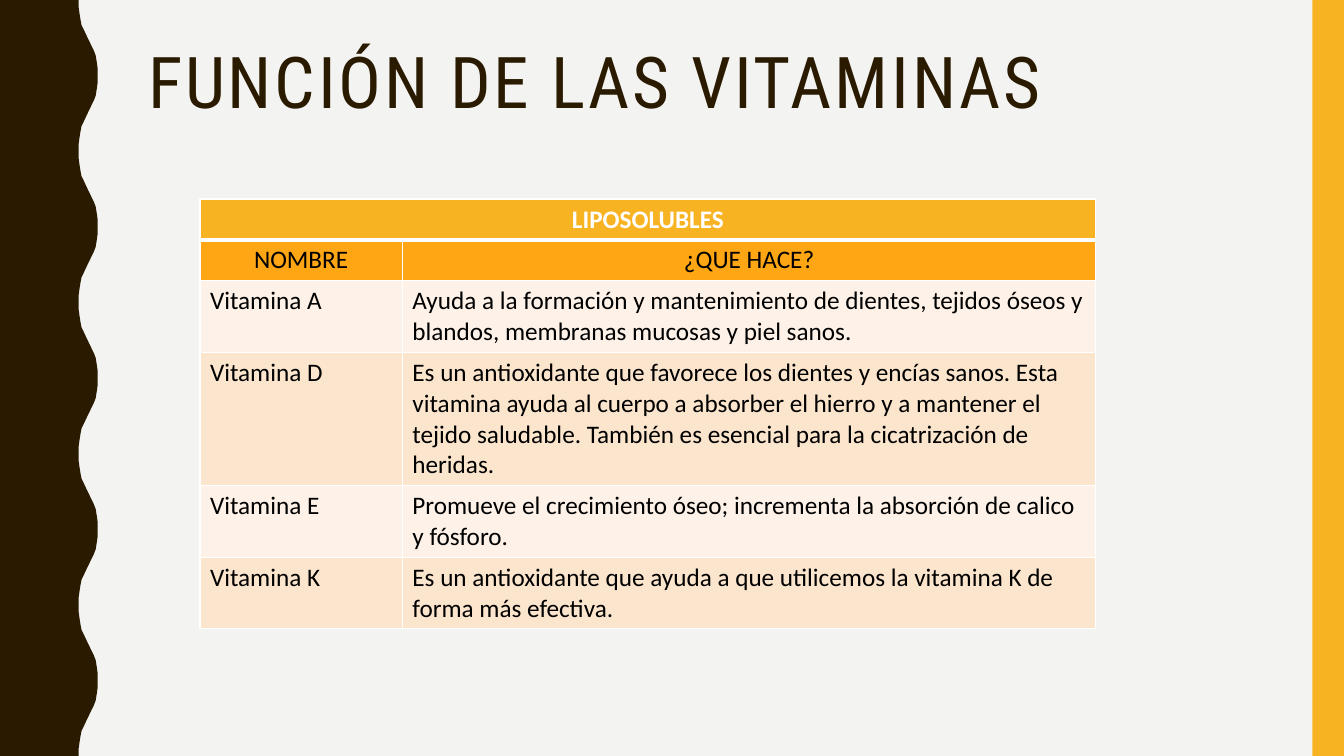
"""Builds the slide on what the fat-soluble vitamins do."""
from lxml.etree import SubElement
from pptx import Presentation
from pptx.dml.color import RGBColor
from pptx.enum.shapes import MSO_SHAPE
from pptx.enum.text import MSO_ANCHOR, MSO_AUTO_SIZE, PP_ALIGN
from pptx.oxml.ns import qn
from pptx.util import Pt


def paint(fill, color):
    fill.solid()
    fill.fore_color.rgb = RGBColor.from_string(color)


def add_border(cell, side, width):
    ln = SubElement(cell._tc.get_or_add_tcPr(), qn(f"a:ln{side}"), w=str(Pt(width)))
    SubElement(SubElement(ln, qn("a:solidFill")), qn("a:srgbClr"), val="FFFFFF")


DARK, GOLD, ORANGE = "2A1A00", "F8B323", "FFA615"
BANDS = ["FEF2E8", "FCE5CD"]

prs = Presentation()
prs.slide_width, prs.slide_height = Pt(960), Pt(540)
s = prs.slides.add_slide(prs.slide_layouts[5])
paint(s.background.fill, "F3F3F2")

wave_x = [56.2, 56.2, 56.9, 57.6, 58.3, 59.8, 61.2, 62.6, 64.1, 65.5, 67, 68.4, 69.1, 69.8, 69.8]
wave_y = [0, 5, 10, 14.4, 18, 21, 24, 27, 30, 33, 36, 39.6, 44, 49, 54]
edge = []
for half in range(10):
    xs = wave_x[::-1] if half % 2 else wave_x
    edge += [(Pt(x), Pt(54 * half + y)) for x, y in zip(xs, wave_y)]
fb = s.shapes.build_freeform(0, 0)
fb.add_line_segments(edge + [(0, Pt(540))], close=True)
wave = fb.convert_to_shape()
bar = s.shapes.add_shape(MSO_SHAPE.RECTANGLE, Pt(937.5), 0, Pt(22.5), Pt(540))
for sp, color in [(wave, DARK), (bar, GOLD)]:
    sp.shadow.inherit = False
    sp.line.fill.background()
    paint(sp.fill, color)

title = s.shapes.title
title.left, title.top, title.width, title.height = Pt(98.6), Pt(30.2), Pt(801.4), Pt(117.4)
tf = title.text_frame
tf.text = "FUNCIÓN DE LAS VITAMINAS"
tf.auto_size = MSO_AUTO_SIZE.NONE
tf.vertical_anchor = MSO_ANCHOR.TOP
p = tf.paragraphs[0]
p.alignment = PP_ALIGN.LEFT
p.line_spacing = 0.9
r = p.runs[0]
r.font.name, r.font.size = "Roboto Condensed", Pt(51)
paint(r.font.fill, DARK)
r.font._element.set("spc", "200")

rows = [
    ("LIPOSOLUBLES", ""),
    ("NOMBRE", "¿QUE HACE?"),
    ("Vitamina A", "Ayuda a la formación y mantenimiento de dientes, tejidos óseos y blandos, "
     "membranas mucosas y piel sanos."),
    ("Vitamina D", "Es un antioxidante que favorece los dientes y encías sanos. Esta vitamina "
     "ayuda al cuerpo a absorber el hierro y a mantener el tejido saludable. También es esencial "
     "para la cicatrización de heridas."),
    ("Vitamina E", "Promueve el crecimiento óseo; incrementa la absorción de calico y fósforo."),
    ("Vitamina K", "Es un antioxidante que ayuda a que utilicemos la vitamina K de forma más "
     "efectiva."),
]
fills = [GOLD, ORANGE] + BANDS * 2
table = s.shapes.add_table(len(rows), 2, Pt(142.8), Pt(142.2), Pt(640), Pt(175.2)).table
table.columns[0].width, table.columns[1].width = Pt(144.6), Pt(495.4)
for i, texts in enumerate(rows):
    table.rows[i].height = Pt(29.2)
    for j, text in enumerate(texts):
        cell = table.cell(i, j)
        for side in "LRTB":
            thick = (i, side) in [(0, "B"), (1, "T")]
            add_border(cell, side, 3 if thick else 1)
        paint(cell.fill, fills[i])
        p = cell.text_frame.paragraphs[0]
        p.text = text
        p.alignment = PP_ALIGN.CENTER if i < 2 else PP_ALIGN.LEFT
        for r in p.runs:
            r.font.name, r.font.size, r.font.bold = "Calibri", Pt(18), i == 0
            paint(r.font.fill, "000000" if i else "FFFFFF")
table.cell(0, 0).merge(table.cell(0, 1))

prs.save("out.pptx")
